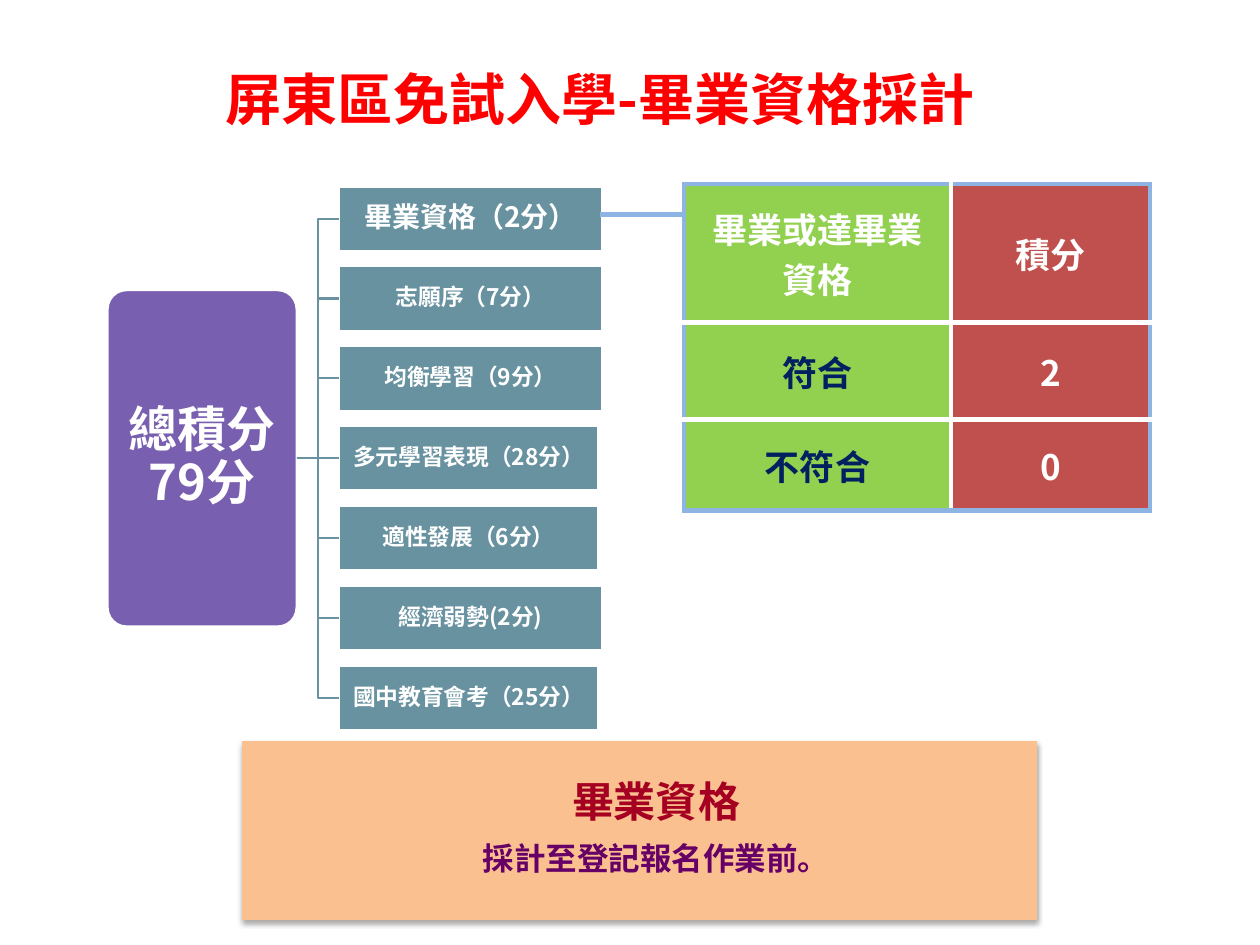
import lxml.etree
import pptx
import pptx.dml.color
import pptx.enum.shapes
import pptx.enum.text
import pptx.oxml.ns
import pptx.util

Cm = pptx.util.Cm
Pt = pptx.util.Pt
qn = pptx.oxml.ns.qn
ALIGN = pptx.enum.text.PP_ALIGN
ANCHOR = pptx.enum.text.MSO_ANCHOR
SHAPE = pptx.enum.shapes.MSO_SHAPE
CONNECTOR = pptx.enum.shapes.MSO_CONNECTOR


def rgb(color):
    return pptx.dml.color.RGBColor.from_string(color)


def add_element(parent, tag, **attributes):
    element = lxml.etree.SubElement(parent, qn(tag))
    for name, value in attributes.items():
        element.set(name, str(value))
    return element


class SlideBuilder:
    font = "Noto Sans CJK SC"
    white = "FFFFFF"
    teal = "6892A0"
    purple = "795FAF"
    blue = "8EB4E3"
    green = "92D050"
    red = "C0504D"
    navy = "002060"

    def __init__(self, slide):
        self.slide = slide

    def add_text(self, paragraph, text, size, color=white, align=ALIGN.CENTER,
                 line_spacing=None, space_before=None):
        paragraph.alignment = align
        if line_spacing:
            paragraph.line_spacing = line_spacing
        if space_before:
            paragraph.space_before = Pt(space_before)
        run = paragraph.add_run()
        run.text = text
        run.font.size = Pt(size)
        run.font.bold = True
        run.font.color.rgb = rgb(color)
        run.font.name = self.font
        add_element(run._r.get_or_add_rPr(), "a:ea", typeface=self.font)

    def set_frame(self, frame, left, top, right, bottom, anchor=ANCHOR.MIDDLE):
        """Set the insets in centimetres, the wrapping and the anchor."""
        frame.margin_left, frame.margin_right = Cm(left), Cm(right)
        frame.margin_top, frame.margin_bottom = Cm(top), Cm(bottom)
        frame.word_wrap = True
        frame.auto_size = pptx.enum.text.MSO_AUTO_SIZE.NONE
        frame.vertical_anchor = anchor

    def title(self, text, left, top, width, height):
        title = self.slide.shapes.title
        title.left, title.top = Cm(left), Cm(top)
        title.width, title.height = Cm(width), Cm(height)
        self.set_frame(title.text_frame, 0.25, 0.13, 0.25, 0.13, ANCHOR.TOP)
        self.add_text(title.text_frame.paragraphs[0], text, 32, "FF0000",
                      align=ALIGN.LEFT, line_spacing=0.85)

    def box(self, left, top, width, height, fill, kind=SHAPE.RECTANGLE, line=None):
        shape = self.slide.shapes.add_shape(
            kind, Cm(left), Cm(top), Cm(width), Cm(height))
        shape.shadow.inherit = False
        shape.fill.solid()
        shape.fill.fore_color.rgb = rgb(fill)
        if line:
            shape.line.color.rgb = rgb(line)
            shape.line.width = Pt(1.25)
        else:
            shape.line.fill.background()
        return shape

    def score_box(self, text, size, inset, *place, **style):
        shape = self.box(*place, line=self.white, **style)
        self.set_frame(shape.text_frame, inset, inset, inset, inset)
        self.add_text(shape.text_frame.paragraphs[0], text, size, line_spacing=0.9)
        return shape

    def connector(self, kind, color, width, start=(0, 0), end=(0, 0)):
        connector = self.slide.shapes.add_connector(
            kind, *(Cm(length) for length in (*start, *end)))
        connector.line.color.rgb = rgb(color)
        connector.line.width = Pt(width)
        add_element(connector._element.spPr, "a:effectLst")
        return connector

    def branch(self, parent, child, straight):
        kind = CONNECTOR.STRAIGHT if straight else CONNECTOR.ELBOW
        connector = self.connector(kind, self.teal, 1.25)
        connector.begin_connect(parent, 3)
        connector.end_connect(child, 1)

    def note(self, heading, text, *place):
        shape = self.box(*place, fill="FAC090")
        effects = shape._element.spPr.find(qn("a:effectLst"))
        shadow = add_element(effects, "a:outerShdw", blurRad=Pt(3.1), dist=Pt(1.8),
                             dir=5400000, rotWithShape=0)
        shade = add_element(shadow, "a:srgbClr", val="000000")
        add_element(shade, "a:alpha", val=35000)
        frame = shape.text_frame
        self.set_frame(frame, 1.35, 0.5, 0.69, 0.5)
        self.add_text(frame.paragraphs[0], heading, 24, "A50021", line_spacing=0.8)
        self.add_text(frame.add_paragraph(), text, 18, "660066",
                      line_spacing=0.8, space_before=12)

    def borders(self, cell, colors):
        """Draw 3 pt borders; colors are left, right, top, bottom."""
        properties = cell._tc.get_or_add_tcPr()
        for side, color in zip("LRTB", colors):
            line = add_element(properties, f"a:ln{side}", w=Pt(3))
            add_element(add_element(line, "a:solidFill"), "a:srgbClr", val=color)

    def table(self, rows, left, top, widths, heights):
        """Draw a table with a blue frame and white inner rules."""
        table = self.slide.shapes.add_table(
            len(heights), len(widths), Cm(left), Cm(top),
            Cm(sum(widths)), Cm(sum(heights))).table
        table.first_row = table.horz_banding = False
        for column, width in zip(table.columns, widths):
            column.width = Cm(width)
        for row, height in zip(table.rows, heights):
            row.height = Cm(height)
        last_row, last_column = len(heights) - 1, len(widths) - 1
        for i, values in enumerate(rows):
            for j, text in enumerate(values):
                cell = table.cell(i, j)
                on_frame = (j == 0, j == last_column, i == 0, i == last_row)
                self.borders(cell, [self.blue if edge else self.white
                                    for edge in on_frame])
                cell.fill.solid()
                cell.fill.fore_color.rgb = rgb(self.red if j else self.green)
                cell.vertical_anchor = ANCHOR.MIDDLE
                self.add_text(cell.text_frame.paragraphs[0], text, 20,
                              self.navy if i and not j else self.white)


def main():
    presentation = pptx.Presentation()
    presentation.slide_width, presentation.slide_height = Cm(25.4), Cm(19.05)
    builder = SlideBuilder(
        presentation.slides.add_slide(presentation.slide_layouts[5]))

    builder.title("屏東區免試入學-畢業資格採計", 4.29, 1.37, 15.82, 1.63)

    total = builder.score_box("總積分79分", 28, 0.15, 2.17, 5.85, 3.81, 6.78,
                              fill=builder.purple, kind=SHAPE.ROUNDED_RECTANGLE)
    total.adjustments[0] = 0.1

    wide, narrow = 5.31, 5.23
    items = [
        ("畢業資格（2分）", 16, wide),
        ("志願序（7分）", 13, wide),
        ("均衡學習（9分）", 13, wide),
        ("多元學習表現（28分）", 13, narrow),
        ("適性發展（6分）", 13, narrow),
        ("經濟弱勢(2分)", 13, wide),
        ("國中教育會考（25分）", 13, narrow),
    ]
    for index, (text, size, width) in enumerate(items):
        item = builder.score_box(text, size, 0.03, 6.83, 3.76 + 1.61 * index,
                                 width, 1.3, fill=builder.teal)
        builder.branch(total, item, straight=index == len(items) // 2)

    builder.connector(CONNECTOR.STRAIGHT, builder.blue, 3, (12.09, 4.32), (13.89, 4.32))
    builder.note("畢業資格", "採計至登記報名作業前。", 4.88, 14.94, 16.03, 3.61)
    builder.table([("畢業或達畢業資格", "積分"), ("符合", "2"), ("不符合", "0")],
                  13.79, 3.71, widths=(5.38, 4.01), heights=(2.79, 1.96, 1.83))

    presentation.save("out.pptx")


if __name__ == "__main__":
    main()
